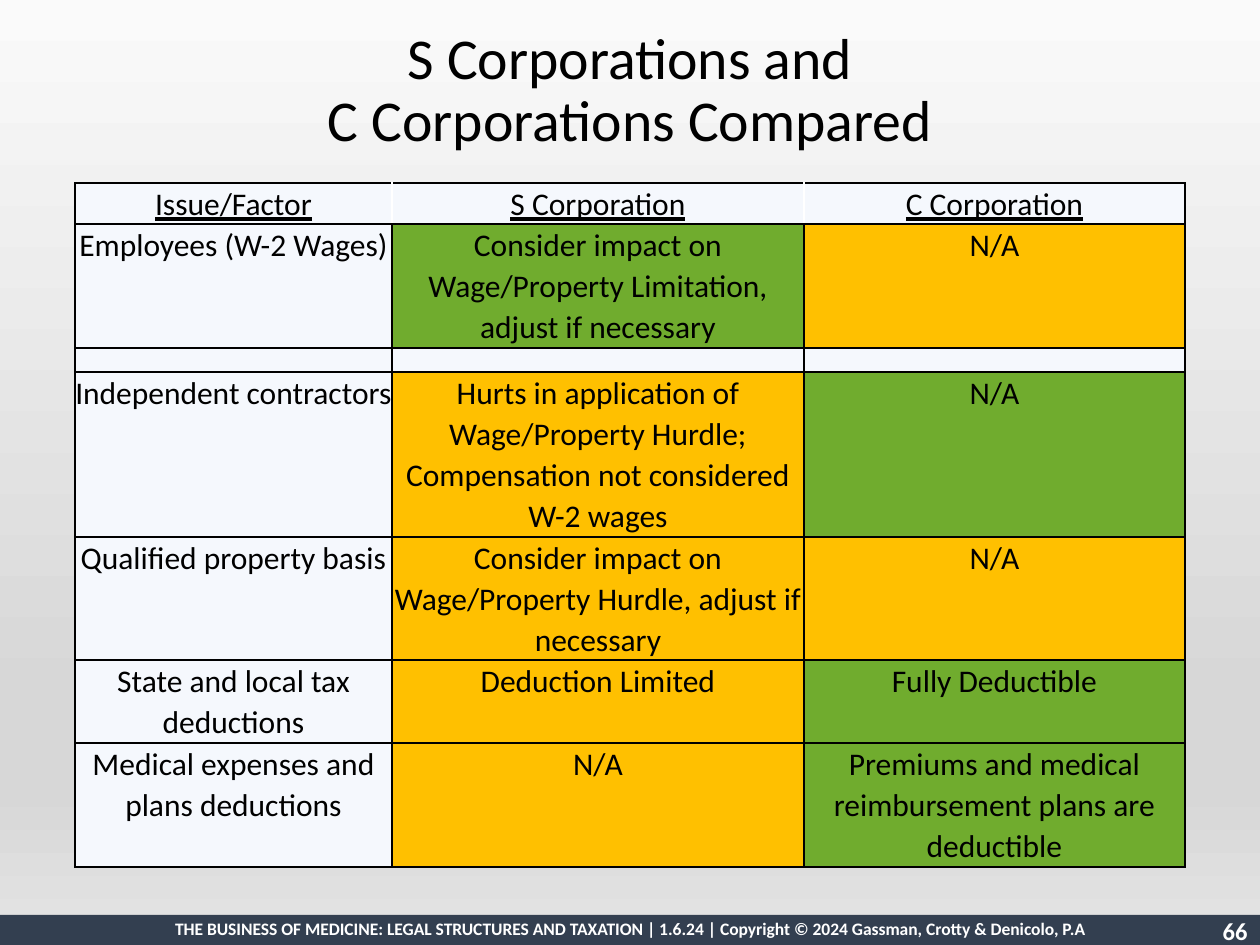
"""Build a slide with a table comparing S and C corporations."""

from lxml.etree import SubElement
from pptx import Presentation
from pptx.dml.color import RGBColor
from pptx.enum.shapes import MSO_SHAPE
from pptx.enum.text import MSO_ANCHOR, MSO_AUTO_SIZE, PP_ALIGN
from pptx.oxml.ns import qn
from pptx.util import Emu, Pt

SCALE = 914400 / 126
COLORS = {
    "black": "000000",
    "white": "FFFFFF",
    "navy": "333F50",
    "pale": "F5F8FD",
    "green": "70AC2E",
    "amber": "FFC000",
}
BACKGROUND_STOPS = [(0, "FAFAFA"), (74, "D7D7D7"), (83, "D7D7D7"), (100, "E4E4E4")]


def box(*lengths):
    return [Emu(round(length * SCALE)) for length in lengths]


def add_run(paragraph, text, size, color, bold=False, underline=False):
    run = paragraph.add_run()
    run.text = text
    run.font.name = "Calibri"
    run.font.size = Pt(size)
    run.font.bold = bold
    run.font.underline = underline
    run.font.color.rgb = RGBColor.from_string(COLORS[color])


presentation = Presentation()
presentation.slide_width, presentation.slide_height = box(1260, 945)
slide = presentation.slides.add_slide(presentation.slide_layouts[5])

background = slide.background.fill
background.gradient()
background.gradient_angle = 270
stop_list = slide.element.find(".//" + qn("a:gsLst"))
for stop in list(stop_list):
    stop_list.remove(stop)
for position, color in BACKGROUND_STOPS:
    stop = SubElement(stop_list, qn("a:gs"), pos=str(position * 1000))
    SubElement(stop, qn("a:srgbClr"), val=color)

footer_bar = slide.shapes.add_shape(MSO_SHAPE.RECTANGLE, *box(0, 915, 1260, 30))
footer_bar.shadow.inherit = False
footer_bar.fill.solid()
footer_bar.fill.fore_color.rgb = RGBColor.from_string(COLORS["navy"])
footer_bar.line.fill.background()

footer_texts = [
    ("66", 14, PP_ALIGN.RIGHT, (1031, 910, 229, 50)),
    (
        "THE BUSINESS OF MEDICINE: LEGAL STRUCTURES AND TAXATION | 1.6.24 | "
        "Copyright © 2024 Gassman, Crotty & Denicolo, P.A",
        10,
        PP_ALIGN.CENTER,
        (88, 912, 1084, 34),
    ),
]
for text, size, alignment, place in footer_texts:
    text_frame = slide.shapes.add_textbox(*box(*place)).text_frame
    text_frame.word_wrap = True
    paragraph = text_frame.paragraphs[0]
    paragraph.alignment = alignment
    add_run(paragraph, text, size, "white", bold=True)

title = slide.shapes.title
title.left, title.top, title.width, title.height = box(87, 0, 1086, 183)
title.text_frame.auto_size = MSO_AUTO_SIZE.NONE
title.text_frame.vertical_anchor = MSO_ANCHOR.MIDDLE
paragraph = title.text_frame.paragraphs[0]
paragraph.alignment = PP_ALIGN.CENTER
paragraph.line_spacing = 0.9
add_run(paragraph, "S Corporations and", 33, "black")
paragraph.add_line_break()
add_run(paragraph, "C Corporations Compared", 33, "black")

column_widths = [317, 412, 381]
rows = [
    (41, ["Issue/Factor", "S Corporation", "C Corporation"], ["pale", "pale"]),
    (
        124,
        [
            "Employees (W-2 Wages)",
            "Consider impact on Wage/Property Limitation, adjust if necessary",
            "N/A",
        ],
        ["green", "amber"],
    ),
    (24, ["", "", ""], ["pale", "pale"]),
    (
        165,
        [
            "Independent contractors",
            "Hurts in application of Wage/Property Hurdle; "
            "Compensation not considered W-2 wages",
            "N/A",
        ],
        ["amber", "green"],
    ),
    (
        123,
        [
            "Qualified property basis",
            "Consider impact on Wage/Property Hurdle, adjust if necessary",
            "N/A",
        ],
        ["amber", "amber"],
    ),
    (
        83,
        ["State and local tax deductions", "Deduction Limited", "Fully Deductible"],
        ["amber", "green"],
    ),
    (
        124,
        [
            "Medical expenses and plans deductions",
            "N/A",
            "Premiums and medical reimbursement plans are deductible",
        ],
        ["amber", "green"],
    ),
]
table_height = sum(height for height, texts, fills in rows)
table = slide.shapes.add_table(
    len(rows),
    len(column_widths),
    *box(75, 183, sum(column_widths), table_height),
).table
for column, width in zip(table.columns, box(*column_widths)):
    column.width = width

for row_index, (height, texts, fills) in enumerate(rows):
    table.rows[row_index].height = box(height)[0]
    is_header = row_index == 0
    for column_index, (text, fill) in enumerate(zip(texts, ["pale", *fills])):
        cell = table.cell(row_index, column_index)
        cell.margin_left = cell.margin_right = cell.margin_top = cell.margin_bottom = 0

        properties = cell._tc.get_or_add_tcPr()
        for side in "LRTB":
            is_inner = (side == "L" and column_index > 0) or (
                side == "R" and column_index < len(column_widths) - 1
            )
            border_color = "white" if is_header and is_inner else "black"
            border = SubElement(properties, qn("a:ln" + side), w="12700")
            solid_fill = SubElement(border, qn("a:solidFill"))
            SubElement(solid_fill, qn("a:srgbClr"), val=COLORS[border_color])
        cell.fill.solid()
        cell.fill.fore_color.rgb = RGBColor.from_string(COLORS[fill])

        paragraph = cell.text_frame.paragraphs[0]
        paragraph.alignment = PP_ALIGN.CENTER
        if text:
            paragraph.line_spacing = 1.07
            paragraph.space_after = Pt(6)
            add_run(paragraph, text, 18, "black", underline=is_header)
        else:
            SubElement(paragraph._p, qn("a:endParaRPr"), sz="800")

presentation.save("out.pptx")
